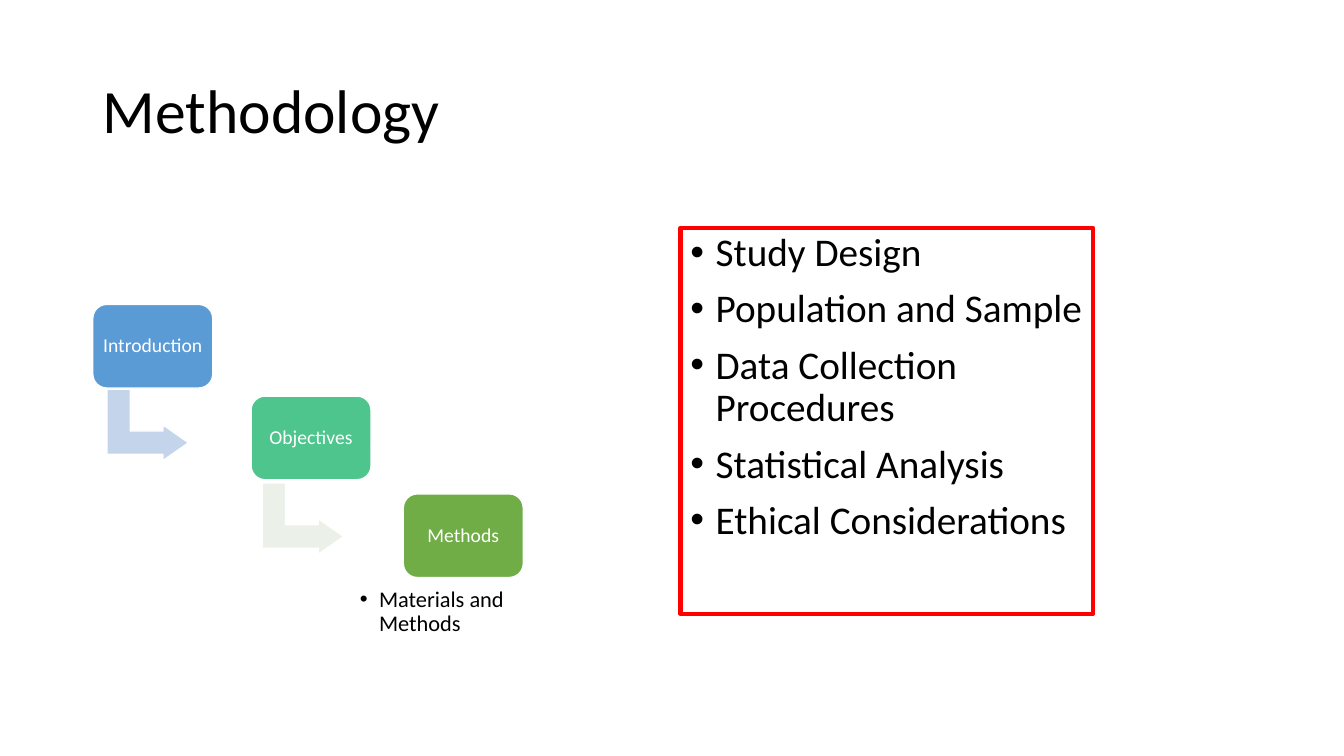
from lxml.etree import SubElement
from pptx import Presentation
from pptx.dml.color import RGBColor
from pptx.enum.shapes import MSO_SHAPE
from pptx.enum.text import MSO_ANCHOR, PP_ALIGN
from pptx.oxml.ns import qn
from pptx.util import Pt

PX = 9144  # 100 px to the inch
COLORS = {
    "black": "000000", "white": "FFFFFF", "red": "FF0000",
    "blue": "5B9BD5", "teal": "4DC58D", "green": "70AD47",
    "pale blue": "C4D5EB", "pale green": "EBF1E9",
}


class SlideBuilder:
    font = "Calibri"

    def __init__(self, slide):
        self.slide = slide

    def color(self, name):
        return RGBColor.from_string(COLORS[name])

    def shape(self, kind, box, fill, line, width, adjustments=()):
        shape = self.slide.shapes.add_shape(kind, *(value * PX for value in box))
        shape.shadow.inherit = False
        if fill:
            shape.fill.solid()
            shape.fill.fore_color.rgb = self.color(fill)
        else:
            shape.fill.background()
        shape.line.color.rgb = self.color(line)
        shape.line.width = Pt(width)
        for index, value in enumerate(adjustments):
            shape.adjustments[index] = value
        return shape

    def textbox(self, box):
        return self.slide.shapes.add_textbox(*(value * PX for value in box))

    def text(self, shape, lines, size, color="black", align=PP_ALIGN.LEFT,
             anchor=MSO_ANCHOR.MIDDLE, insets=(10, 5), indent=0, before=0):
        frame = shape.text_frame
        frame.word_wrap = True
        frame.vertical_anchor = anchor
        frame.margin_left = frame.margin_right = insets[0] * PX
        frame.margin_top = frame.margin_bottom = insets[1] * PX
        for index, line in enumerate(lines):
            paragraph = frame.add_paragraph() if index else frame.paragraphs[0]
            paragraph.alignment = align
            paragraph.line_spacing = 0.9
            paragraph.space_before = Pt(before)
            if indent:
                self.bullet(paragraph, indent)
            run = paragraph.add_run()
            run.text = line
            run.font.name = self.font
            run.font.size = Pt(size)
            run.font.color.rgb = self.color(color)

    def bullet(self, paragraph, indent):
        properties = paragraph._p.get_or_add_pPr()
        properties.set("marL", str(indent * PX))
        properties.set("indent", str(-indent * PX))
        SubElement(properties, qn("a:buFont"), typeface="Arial")
        SubElement(properties, qn("a:buChar"), char="•")

    def step(self, left, top, label, fill):
        box = self.shape(MSO_SHAPE.ROUNDED_RECTANGLE, (left, top, 119, 83),
                         fill, "white", 1, [0.167])
        self.text(box, [label], 14, "white", PP_ALIGN.CENTER, insets=(6, 6))

    def step_arrow(self, left, top, fill):
        arrow = self.shape(MSO_SHAPE.BENT_UP_ARROW, (left, top, 71, 81),
                           fill, "white", 1, [0.328, 0.25, 0.358])
        arrow.rotation = 90


def main():
    presentation = Presentation()
    presentation.slide_width = 1333 * PX
    presentation.slide_height = 750 * PX
    builder = SlideBuilder(presentation.slides.add_slide(presentation.slide_layouts[6]))

    # Title
    builder.text(builder.textbox((92, 40, 1150, 145)), ["Methodology"], 44)

    # Descending steps
    for left, top, fill in ((111, 381, "pale blue"), (265, 474, "pale green")):
        builder.step_arrow(left, top, fill)
    for left, top, label, fill in (
        (92, 302, "Introduction", "blue"),
        (249, 393, "Objectives", "teal"),
        (400, 490, "Methods", "green"),
    ):
        builder.step(left, top, label, fill)
    builder.text(builder.textbox((348, 574, 191, 67)), ["Materials and Methods"],
                 16, insets=(9, 9), indent=19)

    # Framed list of methods
    frame = builder.shape(MSO_SHAPE.RECTANGLE, (675, 226, 409, 383), None, "red", 3)
    topics = ["Study Design", "Population and Sample", "Data Collection Procedures",
              "Statistical Analysis", "Ethical Considerations"]
    builder.text(frame, topics, 28, anchor=MSO_ANCHOR.TOP, indent=25, before=10)

    presentation.save("out.pptx")


if __name__ == "__main__":
    main()
